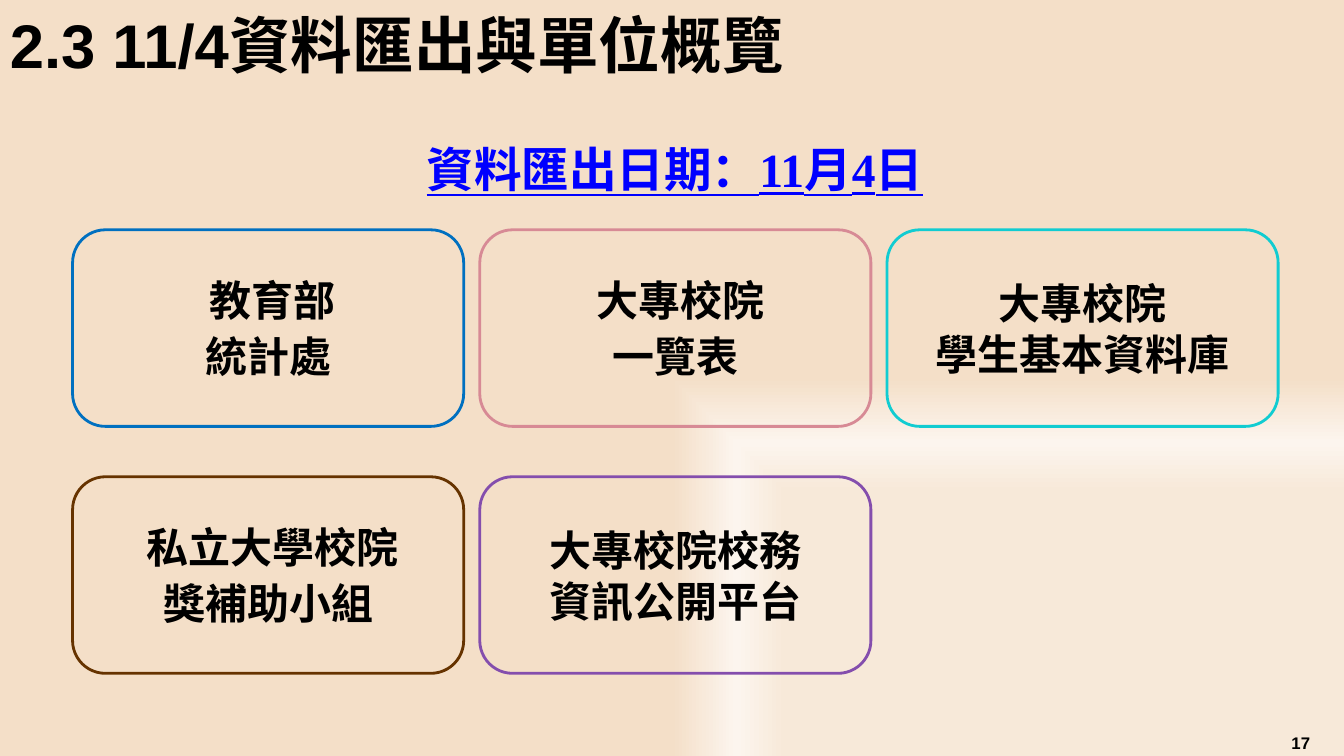
import dataclasses
import typing

import pptx
import pptx.dml.color
import pptx.enum.shapes
import pptx.enum.text
import pptx.oxml
import pptx.oxml.ns
import pptx.util

Pt = pptx.util.Pt
Align = pptx.enum.text.PP_ALIGN
Anchor = pptx.enum.text.MSO_ANCHOR

INK = {
    "text": "000000", "date": "0000FF",
    "blue": "0070C0", "rose": "D78A95", "teal": "11CCD1",
    "brown": "663300", "plum": "844EAD",
}
GLOW = [(0, "F7E8D7"), (70, "F7E9D9"), (83, "FCF5EE"), (100, "F4DFC8")]
HAN, HAN_SC = "Noto Sans CJK TC", "Noto Sans CJK SC"

# Card grid
LEFT, TOP = 51.84, 164.16
WIDE, HIGH = 279.36, 140.4
STEP_X, STEP_Y = 290.88, 176.4


@dataclasses.dataclass
class Label:
    text: str
    left: float
    top: float
    width: float
    height: float
    size: float
    font: str = "Arial"
    ink: str = "text"
    align: typing.Any = Align.CENTER
    anchor: typing.Any = Anchor.TOP
    space: float = 1.0
    line: bool = False


@dataclasses.dataclass
class Card:
    text: str
    ink: str
    col: int
    row: int
    after: float = 0
    font: str = HAN_SC


LABELS = [
    Label("17", 898.56, 519.84, 61.2, 20.16, 12),
    Label("2.3 11/4資料匯出與單位概覽", 0, 10.8, 667.44, 48.24, 44,
          align=Align.LEFT, anchor=Anchor.MIDDLE, space=0.9),
    Label("資料匯出日期：11月4日", 138.24, 76.32, 687.6, 69.12, 34,
          font="Times New Roman", ink="date", space=1.5, line=True),
]
CARDS = [
    Card(" 教育部\n統計處", "blue", 0, 0, 4, HAN),
    Card(" 大專校院\n一覽表", "rose", 1, 0, 4),
    Card("大專校院\n學生基本資料庫", "teal", 2, 0),
    Card(" 私立大學校院\n獎補助小組", "brown", 0, 1, 4),
    Card("大專校院校務\n資訊公開平台", "plum", 1, 1),
]


def tint(name: str) -> pptx.dml.color.RGBColor:
    return pptx.dml.color.RGBColor.from_string(INK[name])


def style(para, size: float, font: str, ink: str, han: str) -> None:
    for run in para.runs:
        run.font.size = Pt(size)
        run.font.bold = True
        run.font.name = font
        run.font.color.rgb = tint(ink)
        # East Asian typeface follows the Latin one
        props = run.font._element
        face = props.makeelement(pptx.oxml.ns.qn("a:ea"), {"typeface": han})
        props.find(pptx.oxml.ns.qn("a:latin")).addnext(face)


def paint(slide) -> None:
    slide.background.fill.solid()
    stops = "".join(
        f'<a:gs pos="{pos * 1000}"><a:srgbClr val="{hue}"/></a:gs>'
        for pos, hue in GLOW)
    grad = pptx.oxml.parse_xml(
        f'<a:gradFill {pptx.oxml.ns.nsdecls("a")} rotWithShape="1">'
        f'<a:gsLst>{stops}</a:gsLst><a:path path="rect">'
        '<a:fillToRect l="100000" t="100000"/></a:path></a:gradFill>')
    props = slide.element.find(".//" + pptx.oxml.ns.qn("p:bgPr"))
    props.replace(props[0], grad)


def write(slide, item: Label) -> None:
    box = slide.shapes.add_textbox(
        Pt(item.left), Pt(item.top), Pt(item.width), Pt(item.height))
    frame = box.text_frame
    frame.word_wrap = True
    frame.vertical_anchor = item.anchor
    frame.text = item.text
    para = frame.paragraphs[0]
    para.alignment = item.align
    para.line_spacing = item.space
    style(para, item.size, item.font, item.ink, HAN)
    para.runs[0].font.underline = item.line


def draw(slide, card: Card) -> None:
    shape = slide.shapes.add_shape(
        pptx.enum.shapes.MSO_SHAPE.ROUNDED_RECTANGLE,
        Pt(LEFT + card.col * STEP_X), Pt(TOP + card.row * STEP_Y),
        Pt(WIDE), Pt(HIGH))
    shape.shadow.inherit = False
    shape.fill.background()
    shape.line.color.rgb = tint(card.ink)
    shape.line.width = Pt(2)
    frame = shape.text_frame
    frame.word_wrap = True
    frame.vertical_anchor = Anchor.MIDDLE
    frame.text = card.text
    for para in frame.paragraphs:
        para.alignment = Align.CENTER
        para.space_after = Pt(card.after)
        style(para, 30, card.font, "text", card.font)


def main() -> None:
    deck = pptx.Presentation()
    deck.slide_width, deck.slide_height = Pt(960), Pt(540)
    slide = deck.slides.add_slide(deck.slide_layouts[6])
    paint(slide)
    # Page number, title and date
    for item in LABELS:
        write(slide, item)
    # Units that receive the data
    for card in CARDS:
        draw(slide, card)
    deck.save("out.pptx")


if __name__ == "__main__":
    main()
